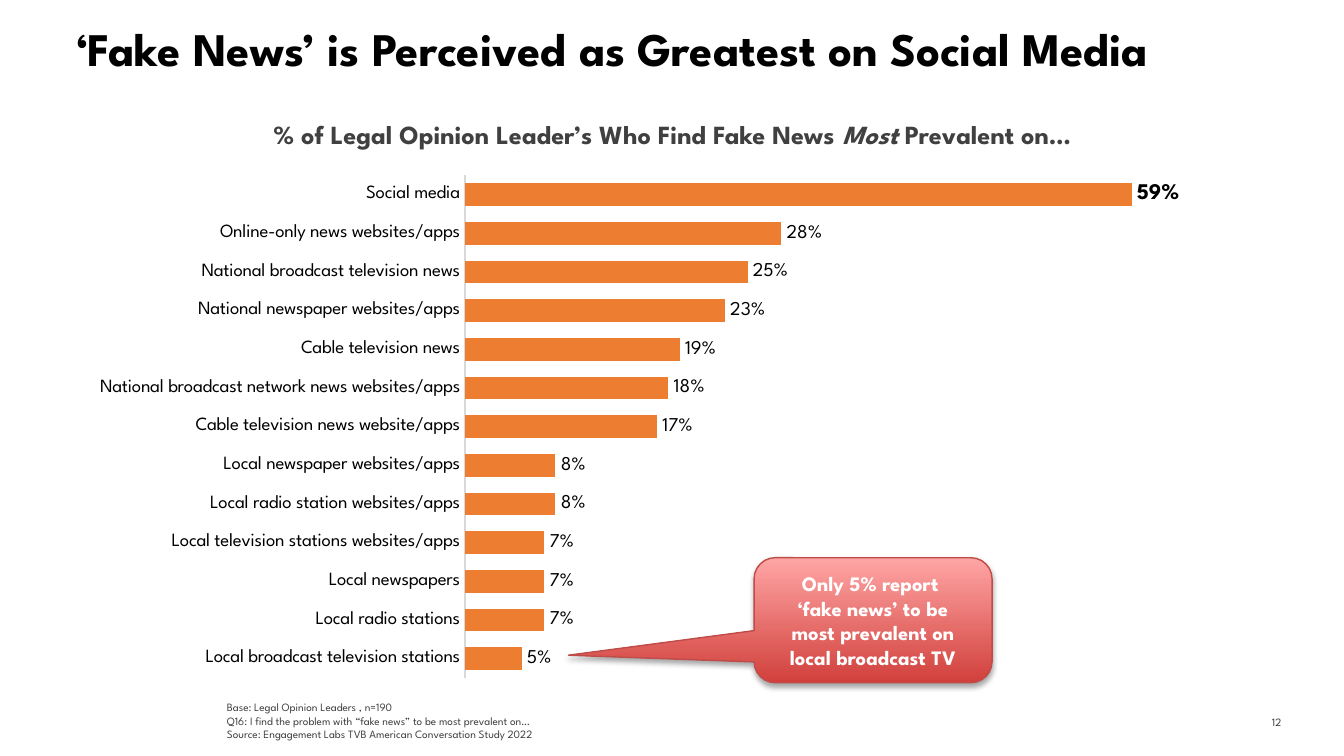
from pptx import Presentation
from pptx import util as u
from pptx.chart.data import CategoryChartData
from pptx.dml.color import RGBColor
from pptx.enum import chart as charts, shapes, text
from pptx.oxml import parse_xml
from pptx.oxml.ns import nsdecls

Pt = u.Pt
FONT = "League Spartan"


def style(font, size, color, bold=False):
    font.name, font.size, font.bold = FONT, Pt(size), bold
    font.color.rgb = RGBColor.from_string(color)


def fill_text(box, paragraphs, size, color, bold=False, align="LEFT", anchor="TOP", wrap=True):
    """Each paragraph is a list of (words, italic) spans."""
    frame = box.text_frame
    frame.word_wrap = wrap
    frame.vertical_anchor = text.MSO_ANCHOR[anchor]
    for index, spans in enumerate(paragraphs):
        para = frame.add_paragraph() if index else frame.paragraphs[0]
        para.alignment = text.PP_ALIGN[align]
        for words, italic in spans:
            span = para.add_run()
            span.text = words
            style(span.font, size, color, bold)
            span.font.italic = italic


deck = Presentation()
deck.slide_width, deck.slide_height = Pt(720), Pt(405)
slide = deck.slides.add_slide(deck.slide_layouts[6])

# Page number
page_number = slide.shapes.add_textbox(Pt(651), Pt(376), Pt(42.5), Pt(21.5))
fill_text(page_number, [[("12", False)]], 6, "3C3C3A", align="RIGHT", anchor="MIDDLE")

# Bar chart
shares = {
    "Social media": 0.59,
    "Online-only news websites/apps": 0.28,
    "National broadcast television news": 0.25,
    "National newspaper websites/apps": 0.23,
    "Cable television news": 0.19,
    "National broadcast network news websites/apps": 0.18,
    "Cable television news website/apps": 0.17,
    "Local newspaper websites/apps": 0.08,
    "Local radio station websites/apps": 0.08,
    "Local television stations websites/apps": 0.07,
    "Local newspapers": 0.07,
    "Local radio stations": 0.07,
    "Local broadcast television stations": 0.05,
}
PERCENT = "#,##0%"
data = CategoryChartData(number_format=PERCENT)
data.categories = list(shares)
data.add_series("Series 1", list(shares.values()))
chart = slide.shapes.add_chart(
    charts.XL_CHART_TYPE.BAR_CLUSTERED, Pt(36.7), Pt(83.5), Pt(683.3), Pt(290.2), data
).chart
chart.has_legend = chart.has_title = False
style(chart.font, 10, "000000")

sources = chart.category_axis
sources.reverse_order = True
sources.major_tick_mark = sources.minor_tick_mark = charts.XL_TICK_MARK.NONE
sources.format.line.color.rgb = RGBColor.from_string("D9D9D9")
sources.format.line.width = Pt(0.75)
style(sources.tick_labels.font, 10, "000000")

percents = chart.value_axis
percents.minimum_scale, percents.maximum_scale = 0, 0.7
percents.has_major_gridlines = percents.visible = False
percents.tick_labels.number_format = PERCENT
percents.tick_labels.number_format_is_linked = False

plot = chart.plots[0]
plot.gap_width = 70
plot.vary_by_categories = False
bars = plot.series[0]
bars.format.fill.solid()
bars.format.fill.fore_color.rgb = RGBColor.from_string("ED7D31")
labels = bars.data_labels
labels.show_value = True
labels.number_format, labels.number_format_is_linked = PERCENT, False
labels.position = charts.XL_LABEL_POSITION.OUTSIDE_END
style(labels.font, 10.5, "000000")
top_label = bars.points[0].data_label
style(top_label.font, 12, "000000", bold=True)
top_label.position = charts.XL_LABEL_POSITION.OUTSIDE_END

plot_area = chart.element.chart.plotArea
for old_layout in plot_area.findall("{*}layout"):
    plot_area.remove(old_layout)
plot_area.insert(0, parse_xml(
    f'<c:layout {nsdecls("c")}><c:manualLayout><c:layoutTarget val="inner"/>'
    '<c:xMode val="edge"/><c:yMode val="edge"/><c:x val="0.311"/><c:y val="0.036"/>'
    '<c:w val="0.62"/><c:h val="0.928"/></c:manualLayout></c:layout>'
))

# Headline, footnotes and chart heading
title = slide.shapes.add_textbox(Pt(34), Pt(10.8), Pt(661.5), Pt(49))
title.text_frame.margin_top = 0
fill_text(title, [[("‘Fake News’ is Perceived as Greatest on Social Media", False)]],
          25, "000000", bold=True)

footnotes = slide.shapes.add_textbox(Pt(114.5), Pt(371.5), Pt(542), Pt(29))
fill_text(footnotes, [
    [("Base: Legal Opinion Leaders , n=190", False)],
    [("Q16: I find the problem with “fake news” to be most prevalent on…", False)],
    [("Source: Engagement Labs TVB American Conversation Study 2022", False)],
], 6, "404040", anchor="BOTTOM")

heading = slide.shapes.add_textbox(Pt(113.8), Pt(59.8), Pt(492.5), Pt(24.5))
fill_text(heading, [[
    ("% of Legal Opinion Leader’s Who Find Fake News ", False),
    ("Most", True),
    (" Prevalent on…", False),
]], 14, "404040", bold=True, align="CENTER", wrap=False)

# Callout pointing at the last bar
callout = slide.shapes.add_shape(
    shapes.MSO_SHAPE.ROUNDED_RECTANGULAR_CALLOUT, Pt(404), Pt(298.8), Pt(127.5), Pt(67)
)
for index, value in enumerate((-1.28, 0.28, 0.17)):
    callout.adjustments[index] = value
callout.fill.gradient()
callout.fill.gradient_angle = 90
for stop, (position, color) in zip(callout.fill.gradient_stops, [(0, "D1403C"), (1, "FFA6A5")]):
    stop.position = position
    stop.color.rgb = RGBColor.from_string(color)
callout.line.color.rgb = RGBColor.from_string("BF4C48")
callout.line.width = Pt(0.75)
callout.shadow.inherit = False
effects = callout.element.spPr.find("{*}effectLst")
effects.append(parse_xml(
    f'<a:outerShdw {nsdecls("a")} blurRad="{Pt(3.1)}" dist="{Pt(1.8)}" dir="5400000" '
    'rotWithShape="0"><a:srgbClr val="000000"><a:alpha val="35000"/></a:srgbClr></a:outerShdw>'
))
fill_text(callout, [[
    ("Only 5% report \v‘fake news’ to be most prevalent on local broadcast TV".split("\v")[0], False),
]], 11, "FFFFFF", bold=True, align="CENTER", anchor="MIDDLE")
message = callout.text_frame.paragraphs[0]
message.add_line_break()
span = message.add_run()
span.text = "‘fake news’ to be most prevalent on local broadcast TV"
style(span.font, 11, "FFFFFF", bold=True)

deck.save("out.pptx")
